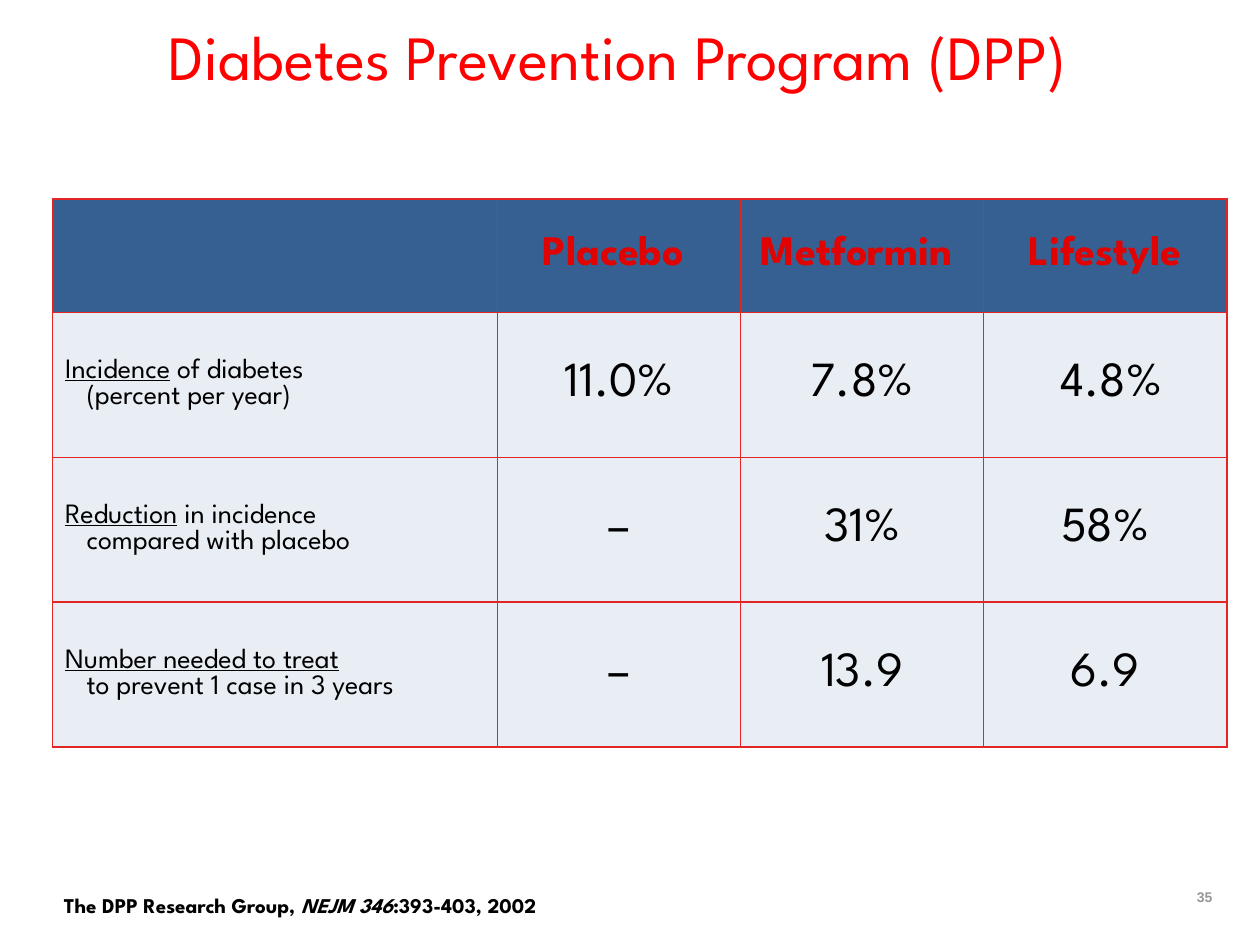
"""Build the diabetes prevention slide with its results table."""
import dataclasses
import typing

import lxml.etree
import pptx
import pptx.dml.color
import pptx.enum.text
import pptx.oxml.ns
import pptx.util

Cm = pptx.util.Cm
Pt = pptx.util.Pt
Align = pptx.enum.text.PP_ALIGN
Anchor = pptx.enum.text.MSO_ANCHOR
Fit = pptx.enum.text.MSO_AUTO_SIZE
FACE = "League Spartan"
RED, BLACK, GREY = "FF0000", "000000", "969696"
HEAD, BODY, RULE, LABEL = "376092", "E9EDF4", "E32526", "E10202"


@dataclasses.dataclass
class Row:
    lead: str
    rest: str
    vals: tuple[str, ...]


@dataclasses.dataclass
class Note:
    box: tuple[float, float, float, float]
    runs: tuple[tuple[str, bool], ...]
    look: dict
    tint: str
    frame: dict
    para: dict


HEADS = ("", "Placebo ", "Metformin ", "Lifestyle")
ROWS = (
    Row("Incidence", " of diabetes\v(percent per year)", ("11.0%", "7.8%", " 4.8%")),
    Row("Reduction", " in incidence\vcompared with placebo", ("–", "31%", "58%")),
    Row("Number needed to treat", "\vto prevent 1 case in 3 years", ("–", "13.9", "6.9")),
)
NOTES = (
    Note((23.42, 17.83, 1.27, 0.56), (("35", False),),
         dict(size=Pt(8), name="Arial", bold=True), GREY,
         dict(word_wrap=True, vertical_anchor=Anchor.MIDDLE),
         dict(alignment=Align.RIGHT, line_spacing=0.9)),
    Note((1.04, 17.86, 10.74, 0.76),
         (("The DPP Research Group, ", False), ("NEJM 346", True),
          (":393-403, 2002", False)),
         dict(size=Pt(12), name=FACE, bold=True), BLACK,
         dict(word_wrap=False, auto_size=Fit.SHAPE_TO_FIT_TEXT), {}),
)


def tint(code: str) -> pptx.dml.color.RGBColor:
    """Turn a hex string into a colour."""
    return pptx.dml.color.RGBColor.from_string(code)


def apply(thing: typing.Any, look: dict) -> None:
    """Set each value of a format on an object."""
    for key, val in look.items():
        setattr(thing, key, val)


def write(para: typing.Any, text: str, code: str, **look: typing.Any) -> None:
    """Add text to a paragraph, with line breaks at vertical tabs."""
    for num, part in enumerate(text.split("\v")):
        if num:
            para.add_line_break()
        if part:
            run = para.add_run()
            run.text = part
            apply(run.font, {"name": FACE, **look})
            run.font.color.rgb = tint(code)


def style(cell: typing.Any, code: str) -> None:
    """Give a cell its borders, fill and anchor."""
    props = cell._tc.get_or_add_tcPr()
    for side in ("a:lnL", "a:lnR", "a:lnT", "a:lnB"):
        line = lxml.etree.SubElement(props, pptx.oxml.ns.qn(side), w=str(Pt(1)))
        fill = lxml.etree.SubElement(line, pptx.oxml.ns.qn("a:solidFill"))
        lxml.etree.SubElement(fill, pptx.oxml.ns.qn("a:srgbClr"), val=RULE)
    cell.fill.solid()
    cell.fill.fore_color.rgb = tint(code)
    cell.vertical_anchor = Anchor.MIDDLE


def put_value(cell: typing.Any, text: str, code: str, **look: typing.Any) -> None:
    """Write centred text in a cell."""
    para = cell.text_frame.paragraphs[0]
    para.alignment = Align.CENTER
    write(para, text, code, **look)


def put_label(cell: typing.Any, row: Row) -> None:
    """Write a row label whose second line hangs."""
    para = cell.text_frame.paragraphs[0]
    props = para._p.get_or_add_pPr()
    props.set("marL", str(Cm(0.43)))
    props.set("indent", str(-Cm(0.43)))
    write(para, row.lead, BLACK, size=Pt(16), bold=False, underline=True)
    write(para, row.rest, BLACK, size=Pt(16), bold=False, underline=False)


def put_table(slide: typing.Any) -> None:
    """Draw the results table."""
    shape = slide.shapes.add_table(
        len(ROWS) + 1, len(HEADS), Cm(1.06), Cm(4.01), Cm(23.65), Cm(11.05))
    table = shape.table
    for num, col in enumerate(table.columns):
        col.width = Cm(4.9) if num else Cm(8.97)
    for num, row in enumerate(table.rows):
        row.height = Cm(2.92) if num else Cm(2.29)
        for cell in row.cells:
            style(cell, BODY if num else HEAD)
    for num, text in enumerate(HEADS):
        put_value(table.cell(0, num), text, LABEL, size=Pt(24), bold=True)
    for num, row in enumerate(ROWS, 1):
        put_label(table.cell(num, 0), row)
        for col, text in enumerate(row.vals, 1):
            put_value(table.cell(num, col), text, BLACK, size=Pt(28), bold=False)


def put_title(slide: typing.Any) -> None:
    """Place and format the title."""
    title = slide.shapes.title
    apply(title, dict(left=Cm(0.64), top=Cm(0.64), width=Cm(23.7), height=Cm(1.5)))
    apply(title.text_frame, dict(
        margin_left=Cm(0.51), margin_right=Cm(0.25), margin_top=Cm(0.13),
        margin_bottom=Cm(0.13), vertical_anchor=Anchor.TOP,
        word_wrap=True, auto_size=Fit.NONE))
    para = title.text_frame.paragraphs[0]
    apply(para, dict(alignment=Align.CENTER, line_spacing=0.7))
    write(para, "Diabetes Prevention Program (DPP) ", RED, size=Pt(36))


def put_note(slide: typing.Any, note: Note) -> None:
    """Draw a line of small text."""
    frame = slide.shapes.add_textbox(*map(Cm, note.box)).text_frame
    apply(frame, note.frame)
    para = frame.paragraphs[0]
    apply(para, note.para)
    for text, slant in note.runs:
        write(para, text, note.tint, italic=slant, **note.look)


def main() -> None:
    """Build and save the slide."""
    deck = pptx.Presentation()
    apply(deck, dict(slide_width=Cm(25.4), slide_height=Cm(19.05)))
    slide = deck.slides.add_slide(deck.slide_layouts[5])
    put_title(slide)
    put_table(slide)
    for note in NOTES:
        put_note(slide, note)
    deck.save("out.pptx")


if __name__ == "__main__":
    main()
